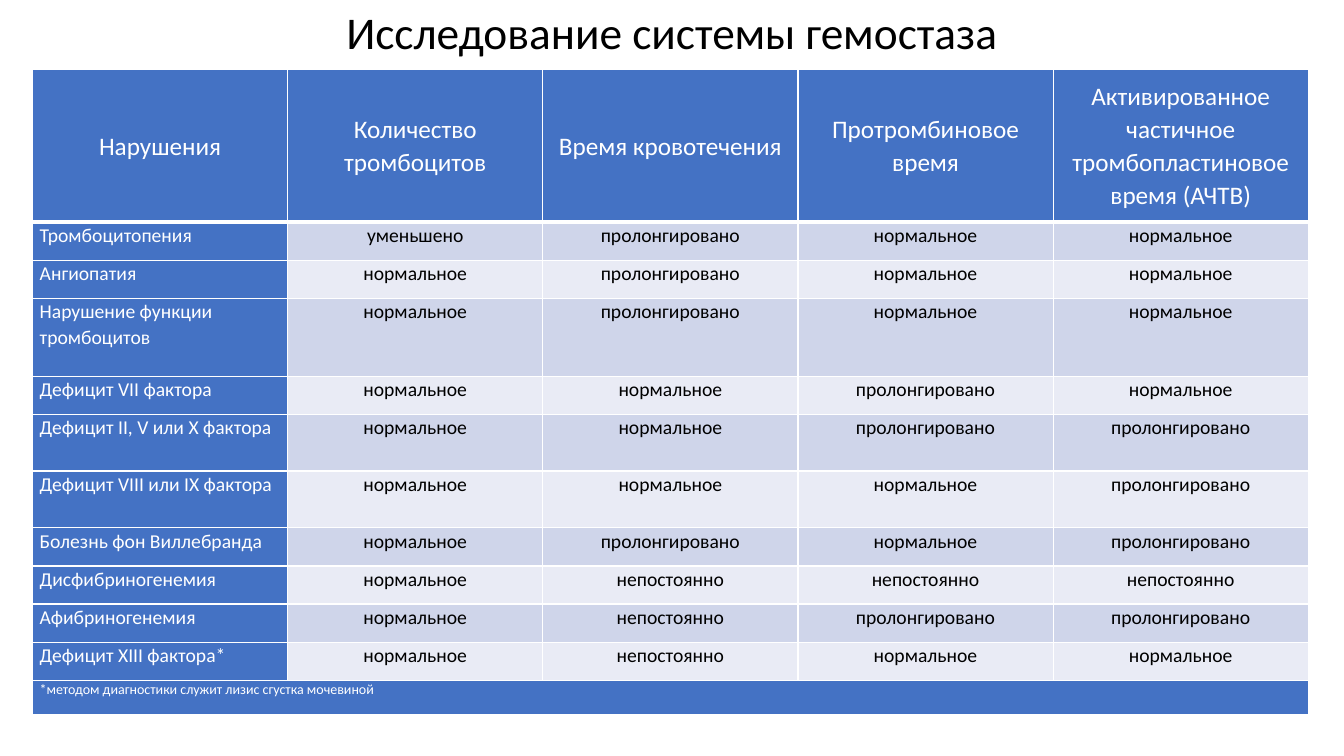
from lxml.etree import SubElement
from pptx import Presentation
from pptx.dml.color import RGBColor
from pptx.enum.text import MSO_ANCHOR, PP_ALIGN
from pptx.oxml.ns import qn
from pptx.util import Cm, Pt

TITLE = "Исследование системы гемостаза"
HEADS = [
    "Нарушения",
    "Количество тромбоцитов",
    "Время кровотечения",
    "Протромбиновое время",
    "Активированное частичное тромбопластиновое время (АЧТВ)",
]
LESS, NORM, LONG, VARY = "уменьшено", "нормальное", "пролонгировано", "непостоянно"
ROWS = [
    ("Тромбоцитопения", LESS, LONG, NORM, NORM),
    ("Ангиопатия", NORM, LONG, NORM, NORM),
    ("Нарушение функции тромбоцитов", NORM, LONG, NORM, NORM),
    ("Дефицит VII фактора", NORM, NORM, LONG, NORM),
    ("Дефицит II, V или X фактора", NORM, NORM, LONG, LONG),
    ("Дефицит VIII или IX фактора", NORM, NORM, NORM, LONG),
    ("Болезнь фон Виллебранда", NORM, LONG, NORM, LONG),
    ("Дисфибриногенемия", NORM, VARY, VARY, VARY),
    ("Афибриногенемия", NORM, VARY, LONG, LONG),
    ("Дефицит XIII фактора*", NORM, VARY, NORM, NORM),
]
NOTE = "*методом диагностики служит лизис сгустка мочевиной"

FONT = "Calibri"
BLUE, WHITE, BLACK = "4472C4", "FFFFFF", "000000"
BANDS = ["CFD5EA", "E9EBF5"]
WIDTH = 6.43
HEIGHTS = [3.86, 0.96, 0.96, 1.96, 0.96, 1.43, 1.43, 0.96, 0.96, 0.96, 0.96, 0.87]


def color(code):
    return RGBColor.from_string(code)


def write(frame, text, size=14, ink=BLACK, align=PP_ALIGN.CENTER, lead=1.07):
    frame.word_wrap = True
    para = frame.paragraphs[0]
    para.alignment, para.line_spacing = align, lead
    run = para.add_run()
    run.text = text
    run.font.name, run.font.size = FONT, Pt(size)
    run.font.color.rgb = color(ink)


def border(cell, base):
    """Draw white cell edges, 1 pt wide except for the bottom one."""
    props = cell._tc.get_or_add_tcPr()
    for side, width in (("L", 1), ("R", 1), ("T", 1), ("B", base)):
        line = SubElement(props, qn("a:ln" + side), w=str(Pt(width)))
        fill = SubElement(line, qn("a:solidFill"))
        SubElement(fill, qn("a:srgbClr"), val=WHITE)


def style(cell, fill, base=1, anchor=MSO_ANCHOR.TOP):
    cell.margin_left = cell.margin_right = Cm(0.18)
    cell.margin_top = cell.margin_bottom = 0
    cell.vertical_anchor = anchor
    border(cell, base)
    cell.fill.solid()
    cell.fill.fore_color.rgb = color(fill)


def build(slide):
    box = slide.shapes.add_textbox(Cm(2.33), Cm(0.2), Cm(29.21), Cm(1.35))
    box.text_frame.vertical_anchor = MSO_ANCHOR.MIDDLE
    write(box.text_frame, TITLE, size=32.4, lead=0.9)

    count = len(HEADS)
    table = slide.shapes.add_table(
        len(HEIGHTS), count, Cm(0.82), Cm(1.74), Cm(WIDTH * count), Cm(sum(HEIGHTS))
    ).table
    for col in table.columns:
        col.width = Cm(WIDTH)
    for row, height in zip(table.rows, HEIGHTS):
        row.height = Cm(height)

    for cell, head in zip(table.rows[0].cells, HEADS):
        style(cell, BLUE, base=3, anchor=MSO_ANCHOR.MIDDLE)
        write(cell.text_frame, head, size=18, ink=WHITE)

    for r, (name, *values) in enumerate(ROWS):
        first, *rest = table.rows[r + 1].cells
        style(first, BLUE)
        write(first.text_frame, name, ink=WHITE, align=PP_ALIGN.LEFT)
        for cell, value in zip(rest, values):
            style(cell, BANDS[r % 2])
            write(cell.text_frame, value)

    last = len(HEIGHTS) - 1
    foot = table.cell(last, 0)
    foot.merge(table.cell(last, count - 1))
    for cell in table.rows[last].cells:
        style(cell, BLUE)
    write(foot.text_frame, NOTE, size=10, ink=WHITE, align=PP_ALIGN.LEFT)


def main():
    deck = Presentation()
    deck.slide_width, deck.slide_height = Cm(33.87), Cm(19.05)
    build(deck.slides.add_slide(deck.slide_layouts[6]))
    deck.save("out.pptx")


if __name__ == "__main__":
    main()
